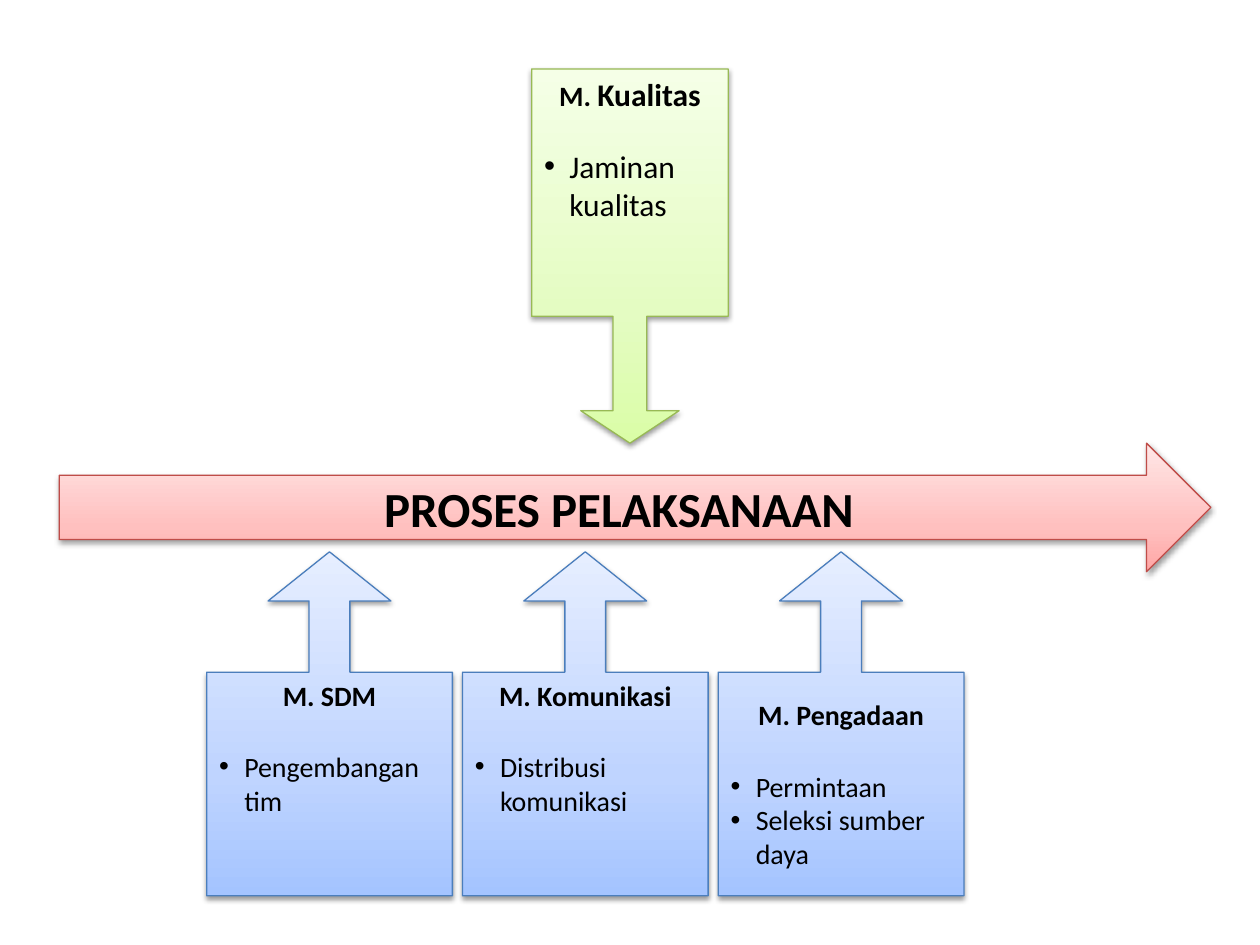
from copy import deepcopy
from dataclasses import dataclass

from lxml import etree
from pptx import Presentation
from pptx import util as u
from pptx.dml.color import RGBColor
from pptx.enum import shapes, text
from pptx.oxml.ns import qn

WIDTH, HEIGHT = u.Inches(10), u.Inches(7.5)
FONT = "Calibri"
INDENT = u.Inches(0.2)
STOPS = (0, 0.35, 1)
COLORS = {
    "text": "000000",
    "red": ("FFA6A5", "FFC0BF", "FFE7E7", "BF4C48"),
    "green": ("DAFDA7", "E4FCC2", "F5FFE7", "98B955"),
    "blue": ("A4C4FF", "BFD4FF", "E6EEFF", "4B7EBC"),
}
TOP, MIDDLE = text.MSO_ANCHOR.TOP, text.MSO_ANCHOR.MIDDLE
DOWN = shapes.MSO_SHAPE.DOWN_ARROW_CALLOUT
UP = shapes.MSO_SHAPE.UP_ARROW_CALLOUT
DOWN_SHAPE = (0.172, 0.25, 0.165, 0.661)
UP_SHAPE = (0.166, 0.25, 0.2, 0.65)
AREA_LEFT, AREA_STEP = 0.164, 0.203


@dataclass
class Box:
    left: float
    top: float
    width: float
    height: float


@dataclass
class Area:
    heading: list[tuple[str, int]]
    tasks: list[str]
    task_size: int = 16
    gap: float = 21.5
    anchor: text.MSO_ANCHOR = TOP


def draw_arrow(slide, kind, box: Box, palette: str, adjustments=()):
    arrow = slide.shapes.add_shape(
        kind, round(box.left * WIDTH), round(box.top * HEIGHT),
        round(box.width * WIDTH), round(box.height * HEIGHT))
    for index, value in enumerate(adjustments):
        arrow.adjustments[index] = value
    *shades, edge = COLORS[palette]
    arrow.fill.gradient()
    arrow.fill.gradient_angle = 90
    stop_list = arrow._element.spPr.find(".//" + qn("a:gsLst"))
    stop_list.insert(1, deepcopy(stop_list[0]))
    for stop, position, shade in zip(arrow.fill.gradient_stops, STOPS, shades):
        stop.position = position
        stop.color.rgb = RGBColor.from_string(shade)
    arrow.line.color.rgb = RGBColor.from_string(edge)
    arrow.line.width = u.Pt(0.75)
    add_shadow(arrow)
    return arrow


def add_shadow(arrow) -> None:
    arrow.shadow.inherit = False
    effects = arrow._element.spPr.find(qn("a:effectLst"))
    shadow = etree.SubElement(
        effects, qn("a:outerShdw"), blurRad=str(u.Pt(3.1)),
        dist=str(u.Pt(1.6)), dir="5400000", rotWithShape="0")
    color = etree.SubElement(shadow, qn("a:srgbClr"), val=COLORS["text"])
    etree.SubElement(color, qn("a:alpha"), val="38000")


def write(paragraph, words: str, *, size=16, bold=False, bullet=False, before=0.0) -> None:
    paragraph.alignment = text.PP_ALIGN.LEFT if bullet else text.PP_ALIGN.CENTER
    run = paragraph.add_run()
    run.text = words
    run.font.name = FONT
    run.font.size = u.Pt(size)
    run.font.bold = bold
    run.font.color.rgb = RGBColor.from_string(COLORS["text"])
    if before:
        paragraph.space_before = u.Pt(before)
    if bullet:
        properties = paragraph._p.get_or_add_pPr()
        properties.set("marL", str(INDENT))
        properties.set("indent", str(-INDENT))
        etree.SubElement(properties, qn("a:buFont"), typeface="Arial")
        etree.SubElement(properties, qn("a:buChar"), char="•")


def draw_area(slide, area: Area, kind, box: Box, palette: str, adjustments) -> None:
    frame = draw_arrow(slide, kind, box, palette, adjustments).text_frame
    frame.word_wrap = True
    frame.vertical_anchor = area.anchor
    for words, size in area.heading:
        write(frame.paragraphs[0], words, size=size, bold=True)
    for index, task in enumerate(area.tasks):
        write(frame.add_paragraph(), task, size=area.task_size, bullet=True,
              before=0 if index else area.gap)


def main() -> None:
    deck = Presentation()
    deck.slide_width, deck.slide_height = WIDTH, HEIGHT
    slide = deck.slides.add_slide(deck.slide_layouts[6])

    process = draw_arrow(slide, shapes.MSO_SHAPE.RIGHT_ARROW,
                         Box(0.047, 0.469, 0.914, 0.136), "red")
    process.text_frame.vertical_anchor = MIDDLE
    write(process.text_frame.paragraphs[0], "PROSES PELAKSANAAN", size=28, bold=True)

    quality = Area([("M. ", 16), ("Kualitas", 18)], ["Jaminan kualitas"], 18, 19.5)
    draw_area(slide, quality, DOWN, Box(0.422, 0.073, 0.156, 0.396), "green", DOWN_SHAPE)

    supporting = [
        Area([("M. SDM", 16)], ["Pengembangan tim"]),
        Area([("M. Komunikasi", 16)], ["Distribusi komunikasi"]),
        Area([("M. Pengadaan", 16)], ["Permintaan", "Seleksi sumber daya"], anchor=MIDDLE),
    ]
    for column, area in enumerate(supporting):
        box = Box(AREA_LEFT + column * AREA_STEP, 0.584, 0.195, 0.364)
        draw_area(slide, area, UP, box, "blue", UP_SHAPE)

    deck.save("out.pptx")


if __name__ == "__main__":
    main()
